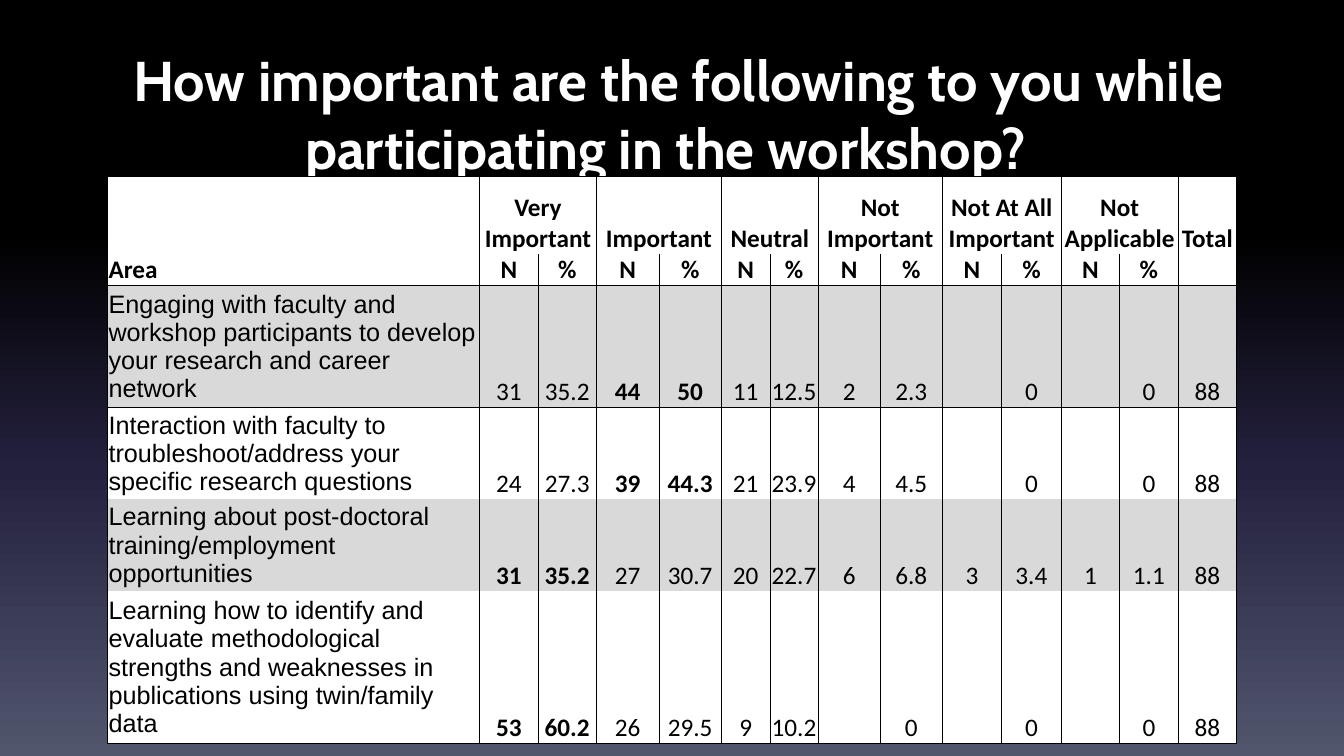
from lxml import etree
from pptx import Presentation
from pptx import util as u
from pptx.dml.color import RGBColor
from pptx.enum import text
from pptx.oxml import ns

HUES = {"ink": "000000", "paper": "FFFFFF", "band": "D9D9D9",
        "dusk": "24213E", "slate": "51566D"}
SKY = [(0, "ink"), (31, "ink"), (62, "dusk"), (100, "slate")]
PLAIN = "{2D5ABB26-0587-4C30-8999-92F81FD0307C}"  # no style, no grid
TITLE = (" How important are the following to you while"
         " participating in the workshop? ")
GRADES = ["Very Important", "Important", "Neutral", "Not Important",
          "Not At All Important", "Not Applicable"]
WIDTHS = [1.16, 1.24, 0.96, 1.23, 1.18, 1.16]  # one per grade, N and % share it
HEIGHTS = [0.77, 0.3, 1.14, 0.85, 0.85, 1.42]
TOTAL = "88"
AREAS = [
    ("Engaging with faculty and workshop participants to develop"
     " your research and career network",
     "31 35.2|44 50|11 12.5|2 2.3| 0| 0"),
    ("Interaction with faculty to troubleshoot/address your"
     " specific research questions",
     "24 27.3|39 44.3|21 23.9|4 4.5| 0| 0"),
    ("Learning about post-doctoral training/employment opportunities",
     "31 35.2|27 30.7|20 22.7|6 6.8|3 3.4|1 1.1"),
    ("Learning how to identify and evaluate methodological strengths"
     " and weaknesses in publications using twin/family data",
     "53 60.2|26 29.5|9 10.2| 0| 0| 0"),
]
LAST = 2 * len(GRADES) + 1  # column of the totals


def rgb(hue):
    return RGBColor.from_string(HUES[hue])


def paint_sky(slide):
    fill = slide.background.fill
    fill.gradient()
    fill.gradient_angle = 270
    stops = next(slide.element.iter(ns.qn("a:gsLst")))
    for stop in list(stops):
        stops.remove(stop)
    for share, hue in SKY:
        stop = etree.SubElement(stops, ns.qn("a:gs"), pos=str(share * 1000))
        etree.SubElement(stop, ns.qn("a:srgbClr"), val=HUES[hue])


def write(frame, words, size, face, hue, bold, align):
    para = frame.paragraphs[0]
    para.alignment = align
    run = para.add_run()
    run.text = words
    run.font.size = u.Pt(size)
    run.font.name = face
    run.font.bold = bold
    run.font.color.rgb = rgb(hue)


def add_title(slide, wide, high):
    box = slide.shapes.add_textbox(int(wide * 0.05), int(high * 0.05),
                                   int(wide * 0.9), int(high * 0.17))
    frame = box.text_frame
    frame.word_wrap = True
    frame.vertical_anchor = text.MSO_ANCHOR.TOP
    frame.margin_top = u.Inches(0.08)
    write(frame, TITLE, 40, "Cabin", "paper", True, text.PP_ALIGN.CENTER)


def rule(cell, sides):
    """Draw thin lines on the given sides, placed ahead of the cell's fill."""
    props = cell._tc.get_or_add_tcPr()
    for spot, side in enumerate(s for s in "LRTB" if s in sides):
        line = etree.Element(ns.qn("a:ln" + side), w=str(u.Pt(0.5)))
        fill = etree.SubElement(line, ns.qn("a:solidFill"))
        etree.SubElement(fill, ns.qn("a:srgbClr"), val=HUES["ink"])
        props.insert(spot, line)


def edges(row, col):
    """Lines frame each column group, the header and the whole table."""
    sides = ""
    if col in (0, LAST) or col % 2:
        sides += "L"
    if col in (0, LAST) or col % 2 == 0:
        sides += "R"
    if row in (0, 2):
        sides += "T"
    if row in (1, len(HEIGHTS) - 1):
        sides += "B"
    return sides


def style(cell, row, col):
    cell.fill.solid()
    cell.fill.fore_color.rgb = rgb("band" if row in (2, 4) else "paper")
    cell.margin_left = cell.margin_right = cell.margin_top = u.Inches(0.01)
    cell.margin_bottom = 0
    body = row > 1 and col == 0
    cell.vertical_anchor = (text.MSO_ANCHOR.MIDDLE if body
                            else text.MSO_ANCHOR.BOTTOM)
    rule(cell, edges(row, col))


def fill_in(cell, words, bold=False, face="Calibri", align=text.PP_ALIGN.CENTER):
    if words:
        write(cell.text_frame, words, 18, face, "ink", bold, align)


def add_head(grid):
    fill_in(grid.cell(1, 0), "Area", True, align=text.PP_ALIGN.LEFT)
    fill_in(grid.cell(0, LAST), "Total", True)
    for col, grade in zip(range(1, LAST, 2), GRADES):
        grid.cell(0, col).merge(grid.cell(0, col + 1))
        fill_in(grid.cell(0, col), grade, True)
        fill_in(grid.cell(1, col), "N", True)
        fill_in(grid.cell(1, col + 1), "%", True)


def add_area(grid, row, area, votes):
    """Fill one row, with the most frequent answer in bold."""
    fill_in(grid.cell(row, 0), area, face="Arial", align=text.PP_ALIGN.LEFT)
    pairs = [pair.split(" ") for pair in votes.split("|")]
    top = max(float(share) for _, share in pairs)
    for col, (count, share) in zip(range(1, LAST, 2), pairs):
        bold = float(share) == top
        fill_in(grid.cell(row, col), count, bold)
        fill_in(grid.cell(row, col + 1), share, bold)
    fill_in(grid.cell(row, LAST), TOTAL)


def add_grid(slide, wide, high):
    cols = [3.69] + [w / 2 for w in WIDTHS for _ in "N%"] + [0.58]
    frame = slide.shapes.add_table(
        len(HEIGHTS), len(cols), int(wide * 0.08), u.Inches(1.75),
        u.Inches(sum(cols)), u.Inches(sum(HEIGHTS)))
    grid = frame.table
    grid.first_row = grid.horz_banding = False
    next(frame.element.iter(ns.qn("a:tableStyleId"))).text = PLAIN
    for col, width in enumerate(cols):
        grid.columns[col].width = u.Inches(width)
    for row, height in enumerate(HEIGHTS):
        grid.rows[row].height = u.Inches(height)
        for col in range(len(cols)):
            style(grid.cell(row, col), row, col)
    add_head(grid)
    for row, (area, votes) in enumerate(AREAS, 2):
        add_area(grid, row, area, votes)


def main():
    deck = Presentation()
    deck.slide_width, deck.slide_height = u.Inches(13.33), u.Inches(7.5)
    slide = deck.slides.add_slide(deck.slide_layouts[6])
    paint_sky(slide)
    add_title(slide, deck.slide_width, deck.slide_height)
    add_grid(slide, deck.slide_width, deck.slide_height)
    deck.save("out.pptx")


if __name__ == "__main__":
    main()
